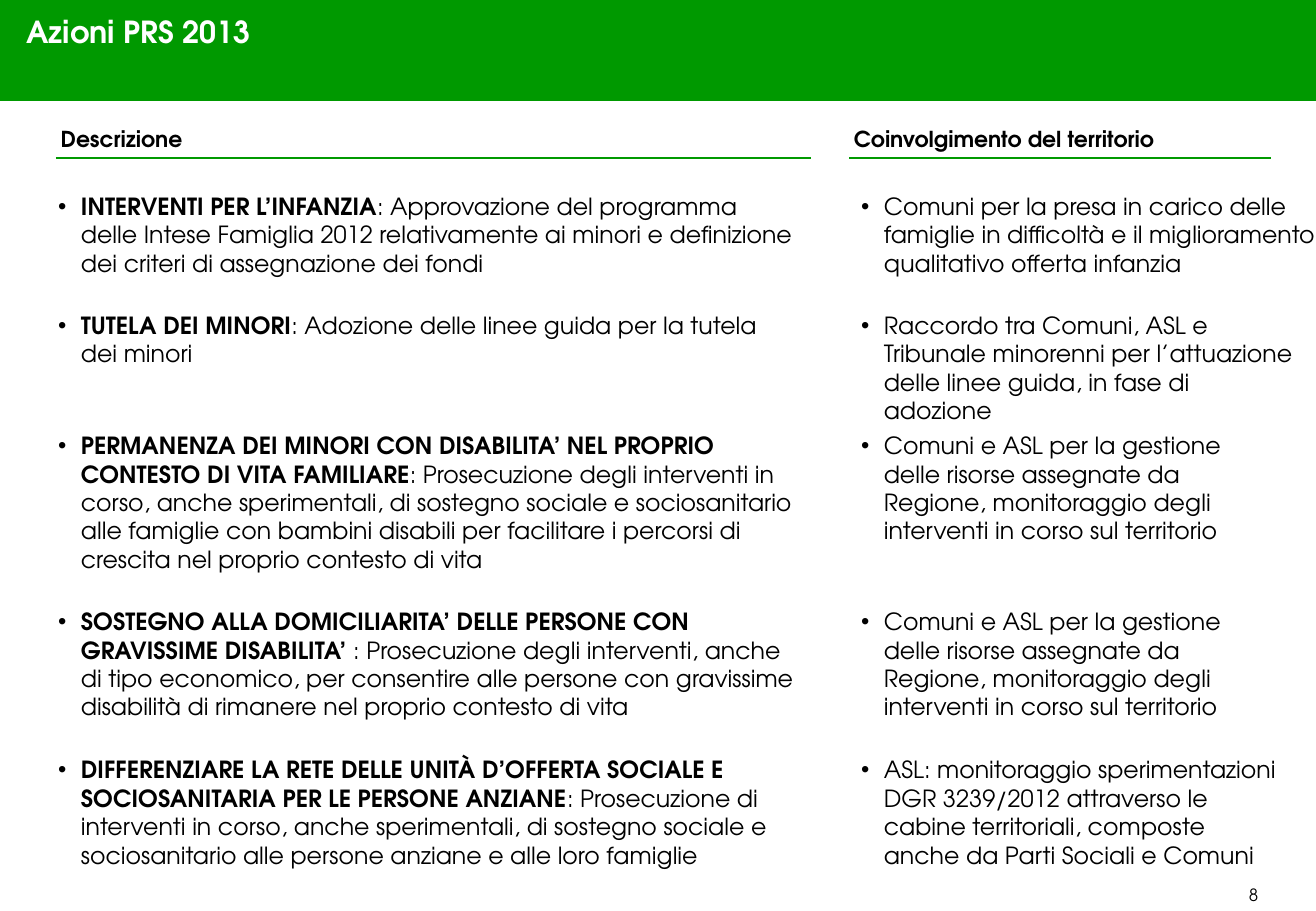
from lxml import etree
from pptx import Presentation
from pptx import util as u
from pptx.dml.color import RGBColor
from pptx.enum import shapes, text
from pptx.oxml import ns

GREEN = RGBColor(0x00, 0x99, 0x00)
WHITE = RGBColor(0xFF, 0xFF, 0xFF)
BLACK = RGBColor(0x00, 0x00, 0x00)

WIDTH, HEIGHT = 780, 540
LEFT_BODY, LEFT_HEADING, RIGHT = 27.4, 33.1, 503.3
LEFT_END, RIGHT_END = 481, 753.1
HEADING_TOP, RULE_Y = 70.6, 93.6
LINE_HEIGHT, PADDING = 16.9, 7.2

# heading, heading width, start of column, end of column
COLUMNS = [
    ("Descrizione", 79.2, LEFT_HEADING, LEFT_END),
    ("Coinvolgimento del territorio", 187.2, RIGHT, RIGHT_END),
]

MANAGEMENT = ("Comuni e ASL per la gestione delle risorse assegnate da Regione, "
              "monitoraggio degli interventi in corso sul territorio")

# top, title, description, its lines, involvement, its lines, its width
ACTIONS = [
    (110.2, "INTERVENTI PER L’INFANZIA",
     ": Approvazione del programma delle Intese Famiglia 2012 relativamente "
     "ai minori e definizione dei criteri di assegnazione dei fondi", 3,
     "Comuni per la presa in carico delle famiglie in difficoltà e il "
     "miglioramento qualitativo offerta infanzia", 3, 289.4),
    (180.7, "TUTELA DEI MINORI",
     ": Adozione delle linee guida per la tutela dei minori", 2,
     "Raccordo tra Comuni, ASL e Tribunale minorenni per l’attuazione delle "
     "linee guida, in fase di adozione", 4, 276.5),
    (252, "PERMANENZA DEI MINORI CON DISABILITA’ NEL PROPRIO CONTESTO DI VITA FAMILIARE",
     ": Prosecuzione degli interventi in corso, anche sperimentali, di sostegno "
     "sociale e sociosanitario alle famiglie con bambini disabili per facilitare "
     "i percorsi di crescita nel proprio contesto di vita", 5,
     MANAGEMENT, 4, 249.1),
    (356.4, "SOSTEGNO ALLA DOMICILIARITA’ DELLE PERSONE CON GRAVISSIME DISABILITA’ ",
     ": Prosecuzione degli interventi, anche di tipo economico, per consentire "
     "alle persone con gravissime disabilità di rimanere nel proprio contesto "
     "di vita", 4,
     MANAGEMENT, 4, 249.1),
    (444.2, "DIFFERENZIARE LA RETE DELLE UNITÀ D’OFFERTA SOCIALE E "
     "SOCIOSANITARIA PER LE PERSONE ANZIANE",
     ": Prosecuzione di interventi in corso, anche sperimentali, di sostegno "
     "sociale e sociosanitario alle persone anziane e alle loro famiglie", 4,
     "ASL: monitoraggio sperimentazioni DGR 3239/2012 attraverso le cabine "
     "territoriali, composte anche da Parti Sociali e Comuni", 4, 260.6),
]


class ActionSlide:
    font = "TeX Gyre Adventor"

    def __init__(self, slide):
        self.slide = slide

    def band(self, width, height):
        band = self.slide.shapes.add_shape(
            shapes.MSO_SHAPE.RECTANGLE, 0, 0, u.Pt(width), u.Pt(height))
        band.shadow.inherit = False
        band.fill.solid()
        band.fill.fore_color.rgb = GREEN
        band.line.fill.background()

    def rule(self, start, end, y):
        rule = self.slide.shapes.add_connector(
            shapes.MSO_CONNECTOR.STRAIGHT, u.Pt(start), u.Pt(y), u.Pt(end), u.Pt(y))
        rule.line.color.rgb = GREEN
        rule.line.width = u.Pt(1.5)
        etree.SubElement(rule._element.spPr, ns.qn("a:effectLst"))

    def words(self, box, runs, size, color=BLACK, wrap=True, inset=7.2):
        """Add a text box of (wording, bold) runs and return its paragraph."""
        frame = self.slide.shapes.add_textbox(*map(u.Pt, box)).text_frame
        frame.word_wrap = wrap
        frame.auto_size = text.MSO_AUTO_SIZE.SHAPE_TO_FIT_TEXT
        frame.margin_left = frame.margin_right = u.Pt(inset)
        frame.margin_top = frame.margin_bottom = u.Pt(3.6)
        paragraph = frame.paragraphs[0]
        for wording, bold in runs:
            run = paragraph.add_run()
            run.text = wording
            run.font.name = self.font
            run.font.size = u.Pt(size)
            run.font.bold = bold
            run.font.color.rgb = color
        return paragraph

    def bullet(self, left, top, width, lines, runs):
        box = (left, top, width, lines * LINE_HEIGHT + PADDING)
        properties = self.words(box, runs, 14)._p.get_or_add_pPr()
        indent = u.Pt(13.5)
        properties.set("marL", str(indent))
        properties.set("indent", str(-indent))
        etree.SubElement(properties, ns.qn("a:buFont"), typeface="Arial")
        etree.SubElement(properties, ns.qn("a:buChar"), char="•")


def main():
    deck = Presentation()
    deck.slide_width, deck.slide_height = u.Pt(WIDTH), u.Pt(HEIGHT)
    page = ActionSlide(deck.slides.add_slide(deck.slide_layouts[6]))

    page.band(WIDTH, 59.8)
    number = page.words((706.3, 520.6, 73.4, 19.4), [("8", False)], 10)
    number.alignment = text.PP_ALIGN.CENTER
    page.words((8.6, 4.3, 755.3, 28.8), [("Azioni PRS 2013", True)], 18, WHITE)

    for heading, width, start, end in COLUMNS:
        page.words((start, HEADING_TOP, width, 23), [(heading, True)], 13,
                   wrap=False, inset=2.9)
        page.rule(start, end, RULE_Y)

    for top, title, description, lines, involvement, right_lines, width in ACTIONS:
        page.bullet(LEFT_BODY, top, LEFT_END - LEFT_BODY, lines,
                    [(title, True), (description, False)])
        page.bullet(RIGHT, top, width, right_lines, [(involvement, False)])

    deck.save("out.pptx")


if __name__ == "__main__":
    main()
